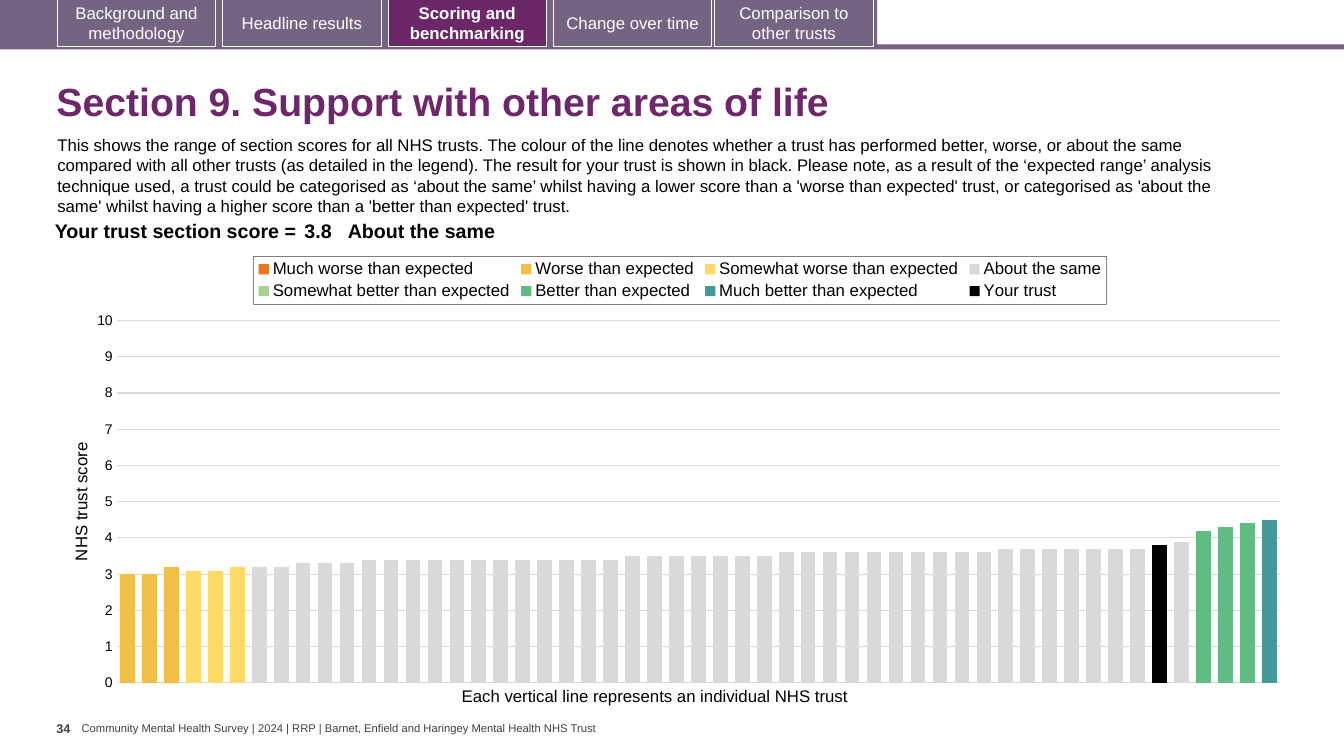
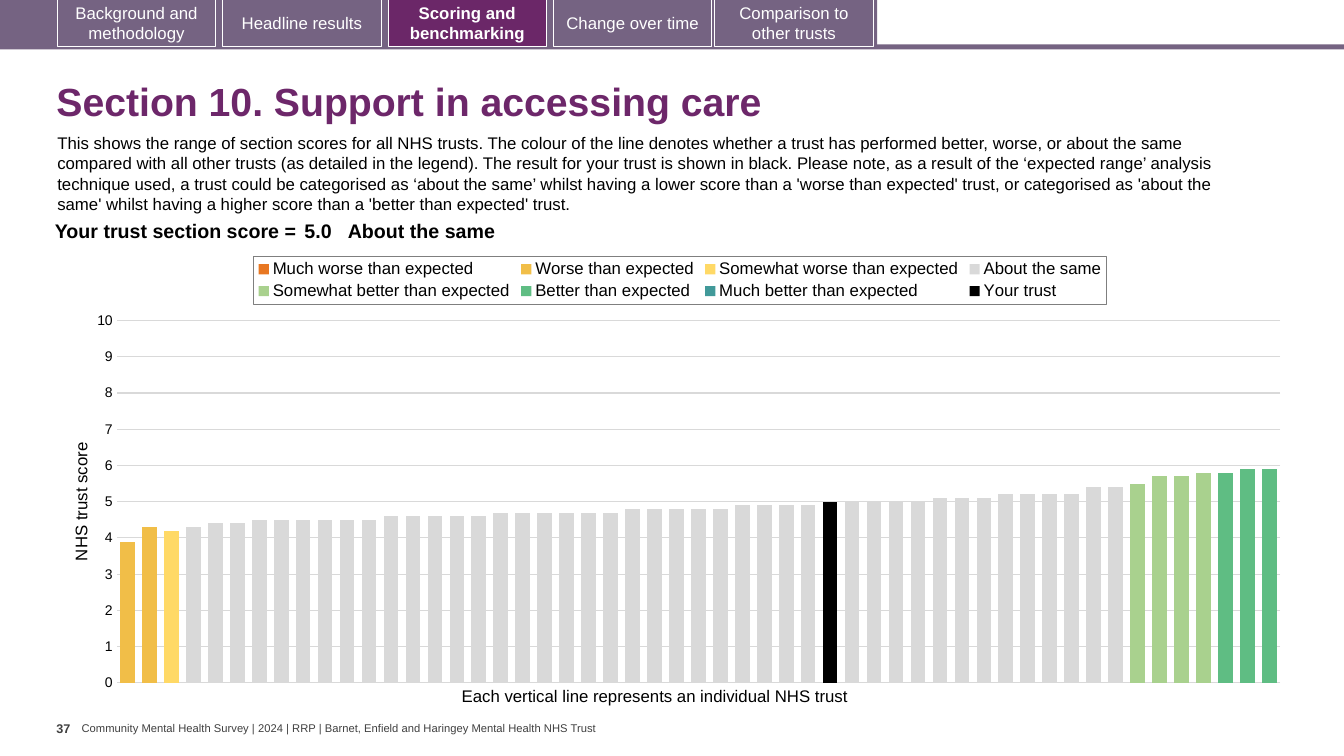
from lxml import etree
from pptx import Presentation
from pptx.chart.data import CategoryChartData
from pptx.dml.color import RGBColor
from pptx.enum.chart import XL_CHART_TYPE, XL_LEGEND_POSITION, XL_TICK_MARK
from pptx.enum.shapes import MSO_SHAPE
from pptx.enum.text import MSO_ANCHOR, MSO_AUTO_SIZE, PP_ALIGN
from pptx.oxml import parse_xml
from pptx.oxml.ns import nsdecls, qn
from pptx.util import Inches, Pt

COLUMN = XL_CHART_TYPE.COLUMN_CLUSTERED
TOP = XL_LEGEND_POSITION.TOP
NO_TICK = XL_TICK_MARK.NONE
RECT = MSO_SHAPE.RECTANGLE
MIDDLE, ANCHOR_TOP = MSO_ANCHOR.MIDDLE, MSO_ANCHOR.TOP
GROW = MSO_AUTO_SIZE.SHAPE_TO_FIT_TEXT
LEFT, CENTER, RIGHT = PP_ALIGN.LEFT, PP_ALIGN.CENTER, PP_ALIGN.RIGHT

COLORS = {
    "band": "756382", "active": "6B2768", "title": "6D276A", "text": "000000",
    "footer": "404040", "white": "FFFFFF", "grid": "D9D9D9", "legend": "7F7F7F",
}
FONT = "Arial"
BANDS = {
    "Much worse than expected": "E87722",
    "Worse than expected": "F1BE48",
    "Somewhat worse than expected": "FFD966",
    "About the same": "D9D9D9",
    "Somewhat better than expected": "A9D18E",
    "Better than expected": "5FBD83",
    "Much better than expected": "419999",
    "Your trust": "000000",
}
TRUSTS = 53
TABS = [
    ("Background and methodology", 0.57),
    ("Headline results", 2.21),
    ("Scoring and benchmarking", 3.85),
    ("Change over time", 5.49),
    ("Comparison to other trusts", 7.09),
]
ACTIVE_TAB = "Scoring and benchmarking"
FOOTER = "Community Mental Health Survey | 2024 | RRP | Barnet, Enfield and Haringey Mental Health NHS Trust"
INTRO = (
    "This shows the range of section scores for all NHS trusts. The colour of the line denotes whether "
    "a trust has performed better, worse, or about the same compared with all other trusts (as detailed "
    "in the legend). The result for your trust is shown in black. Please note, as a result of the "
    "‘expected range’ analysis technique used, a trust could be categorised as ‘about the same’ whilst "
    "having a lower score than a 'worse than expected' trust, or categorised as 'about the same' whilst "
    "having a higher score than a 'better than expected' trust."
)
CAPTION = "Each vertical line represents an individual NHS trust"
SECTIONS = [
    {
        "title": "Section 9. Support with other areas of life",
        "page": "34", "intro_top": 1.29, "score": "3.8", "result": "About the same",
        "bars": {
            "Worse than expected": (1, [3, 3, 3.2]),
            "Somewhat worse than expected": (4, [3.1, 3.1, 3.2]),
            "About the same": (7, [3.2] * 2 + [3.3] * 3 + [3.4] * 12 + [3.5] * 7 + [3.6] * 10
                               + [3.7] * 7 + [3.8, 3.9]),
            "Better than expected": (50, [4.2, 4.3, 4.4]),
            "Much better than expected": (53, [4.5]),
            "Your trust": (48, [3.8]),
        },
    },
    {
        "title": "Section 10. Support in accessing care",
        "page": "37", "intro_top": 1.27, "score": "5.0", "result": "About the same",
        "bars": {
            "Worse than expected": (1, [3.9, 4.3]),
            "Somewhat worse than expected": (3, [4.2]),
            "About the same": (4, [4.3] + [4.4] * 2 + [4.5] * 6 + [4.6] * 5 + [4.7] * 6 + [4.8] * 5
                               + [4.9] * 4 + [5] * 5 + [5.1] * 3 + [5.2] * 4 + [5.4] * 2),
            "Somewhat better than expected": (47, [5.5, 5.7, 5.7, 5.8]),
            "Better than expected": (51, [5.8, 5.9, 5.9]),
            "Your trust": (33, [5]),
        },
    },
]


def rgb(name):
    return RGBColor.from_string(COLORS[name])


def style_font(font, size, color="text", bold=False):
    font.name, font.size, font.bold = FONT, Pt(size), bold
    font.color.rgb = rgb(color)


def write(tf, text, size, color="text", bold=False, align=LEFT):
    p = tf.paragraphs[0]
    p.alignment = align
    r = p.add_run()
    r.text = text
    style_font(r.font, size, color, bold)
    return p


def set_insets(box, x, y):
    box.margin_left = box.margin_right = Inches(x)
    box.margin_top = box.margin_bottom = Inches(y)


def add_label(s, at, text, size, color="text", bold=False, wrap=False, insets=(0.1, 0.05)):
    sp = s.shapes.add_textbox(*map(Inches, at))
    tf = sp.text_frame
    tf.word_wrap = wrap
    set_insets(tf, *insets)
    write(tf, text, size, color, bold)
    return sp


def add_rect(s, at, fill, line=None):
    sp = s.shapes.add_shape(RECT, *map(Inches, at))
    sp.shadow.inherit = False
    sp.fill.solid()
    sp.fill.fore_color.rgb = rgb(fill)
    if line:
        sp.line.color.rgb = rgb(line)
        sp.line.width = Pt(0.75)
    else:
        sp.line.fill.background()
    return sp


def build_layout(layout, s):
    footer = add_label(s, (0.81, 7.16, 5.17, 0.13), FOOTER, 8, "footer", insets=(0, 0))
    footer.text_frame.vertical_anchor = MIDDLE
    footer.text_frame.auto_size = GROW
    shared = [
        footer,
        add_rect(s, (0, 0.44, 13.33, 0.05), "band"),
        add_rect(s, (0, 0, 8.7, 0.47), "band"),
    ]
    for name, left in TABS:
        active = name == ACTIVE_TAB
        tab = add_rect(s, (left, -0.01, 1.57, 0.47), "active" if active else "band", "white")
        tab.text_frame.word_wrap = True
        tab.text_frame.vertical_anchor = MIDDLE
        write(tab.text_frame, name, 12, "white", active, CENTER)
        shared.append(tab)
    for number, sp in enumerate(shared, 101):
        sp.element.xpath(".//p:cNvPr")[0].set("id", str(number))
        layout.shapes.element.append(sp.element)


def add_score(s, score, result):
    cells = [
        ("Your trust section score =", 2.63, 0.04, RIGHT),
        (score, 0.47, 0.04, LEFT),
        (result, 8.59, 0, LEFT),
    ]
    at = (0.35, 2.15, sum(c[1] for c in cells), 0.31)
    table = s.shapes.add_table(1, len(cells), *map(Inches, at)).table
    table.first_row = table.horz_banding = False
    for i, (text, width, inset, align) in enumerate(cells):
        table.columns[i].width = Inches(width)
        cell = table.cell(0, i)
        cell.fill.background()
        cell.vertical_anchor = ANCHOR_TOP
        set_insets(cell, inset, 0.04)
        write(cell.text_frame, text, 14, bold=True, align=align)


def set_plot_layout(plot_area, x, y, w, h):
    for old in plot_area.findall(qn("c:layout")):
        plot_area.remove(old)
    plot_area.insert(0, parse_xml(
        f'<c:layout {nsdecls("c")}><c:manualLayout><c:layoutTarget val="inner"/>'
        '<c:xMode val="edge"/><c:yMode val="edge"/>'
        f'<c:x val="{x}"/><c:y val="{y}"/><c:w val="{w}"/><c:h val="{h}"/>'
        '</c:manualLayout></c:layout>'))


def move_last_series_to_right_axis(plot_area):
    bars = plot_area.find(qn("c:barChart"))
    right = parse_xml(
        f'<c:barChart {nsdecls("c")}><c:barDir val="col"/><c:grouping val="clustered"/>'
        '<c:varyColors val="0"/><c:gapWidth val="50"/><c:overlap val="100"/>'
        '<c:axId val="5001"/><c:axId val="5002"/></c:barChart>')
    right.insert(3, bars.findall(qn("c:ser"))[-1])
    bars.addnext(right)
    cat_axis = parse_xml(
        f'<c:catAx {nsdecls("c")}><c:axId val="5001"/>'
        '<c:scaling><c:orientation val="minMax"/></c:scaling><c:delete val="1"/>'
        '<c:axPos val="b"/><c:crossAx val="5002"/><c:crosses val="autoZero"/></c:catAx>')
    val_axis = parse_xml(
        f'<c:valAx {nsdecls("c", "a")}><c:axId val="5002"/>'
        '<c:scaling><c:orientation val="minMax"/><c:max val="10"/><c:min val="0"/></c:scaling>'
        '<c:delete val="0"/>'
        '<c:axPos val="r"/><c:majorTickMark val="none"/><c:minorTickMark val="none"/>'
        '<c:tickLblPos val="none"/><c:spPr><a:ln><a:noFill/></a:ln></c:spPr>'
        '<c:crossAx val="5001"/><c:crosses val="max"/></c:valAx>')
    left_axis = plot_area.find(qn("c:valAx"))
    left_axis.addnext(val_axis)
    val_axis.addnext(cat_axis)


def outline_legend(legend):
    border = parse_xml(f'<c:spPr {nsdecls("c", "a")}><a:ln w="9525"/></c:spPr>')
    fill = etree.SubElement(border.find(qn("a:ln")), qn("a:solidFill"))
    etree.SubElement(fill, qn("a:srgbClr"), val=COLORS["legend"])
    legend.find(qn("c:overlay")).addnext(border)


def add_scores_chart(s, bars):
    data = CategoryChartData()
    data.categories = [str(n) for n in range(1, TRUSTS + 1)]
    for name in BANDS:
        first, scores = bars.get(name, (1, []))
        values = [None] * (first - 1) + scores
        data.add_series(name, values + [None] * (TRUSTS - len(values)))
    at = map(Inches, (0.67, 2.47, 12.15, 4.44))
    chart = s.shapes.add_chart(COLUMN, *at, data).chart
    chart.has_title = False
    chart.font.name, chart.font.size = "Calibri", Pt(10)
    chart.font.color.rgb = rgb("text")
    plot = chart.plots[0]
    plot.vary_by_categories = False
    plot.gap_width, plot.overlap = 50, 100
    for ser, color in zip(plot.series, BANDS.values()):
        ser.format.fill.solid()
        ser.format.fill.fore_color.rgb = RGBColor.from_string(color)
        ser.invert_if_negative = False
    chart.category_axis.visible = False
    axis = chart.value_axis
    axis.minimum_scale, axis.maximum_scale, axis.major_unit = 0, 10, 1
    axis.major_tick_mark = axis.minor_tick_mark = NO_TICK
    axis.tick_labels.number_format = "0"
    axis.tick_labels.number_format_is_linked = False
    style_font(axis.tick_labels.font, 10)
    axis.format.line.fill.background()
    axis.major_gridlines.format.line.color.rgb = rgb("grid")
    axis.major_gridlines.format.line.width = Pt(0.75)
    write(axis.axis_title.text_frame, "NHS trust score", 12, align=CENTER)
    chart.has_legend = True
    chart.legend.position = TOP
    chart.legend.include_in_layout = False
    style_font(chart.legend.font, 12)
    outline_legend(chart.element.xpath("c:chart/c:legend")[0])
    plot_area = chart.element.xpath("c:chart/c:plotArea")[0]
    set_plot_layout(plot_area, 0.04, 0.16, 0.95, 0.81)
    move_last_series_to_right_axis(plot_area)


def add_section(s, section):
    title = s.shapes.title
    title.left, title.top, title.width, title.height = map(Inches, (0.46, 0.67, 12.49, 0.72))
    title.text_frame.vertical_anchor = MIDDLE
    p = write(title.text_frame, section["title"], 28, "title", True)
    p.line_spacing = 0.9
    add_label(s, (0.56, 7.1, 0.25, 0.4), section["page"], 9, "footer", True, insets=(0, 0.05))
    intro = add_label(s, (0.47, section["intro_top"], 12.13, 0.91), INTRO, 12, wrap=True)
    caption = add_label(s, (4.48, 6.75, 4.11, 0.3), CAPTION, 12)
    intro.text_frame.auto_size = caption.text_frame.auto_size = GROW
    add_scores_chart(s, section["bars"])
    add_score(s, section["score"], section["result"])


def main():
    prs = Presentation()
    prs.slide_width, prs.slide_height = Inches(13.33), Inches(7.5)
    layout = prs.slide_layouts[5]
    slides = [prs.slides.add_slide(layout) for _ in SECTIONS]
    build_layout(layout, slides[0])
    for s, section in zip(slides, SECTIONS):
        add_section(s, section)
    prs.save("out.pptx")


if __name__ == "__main__":
    main()
